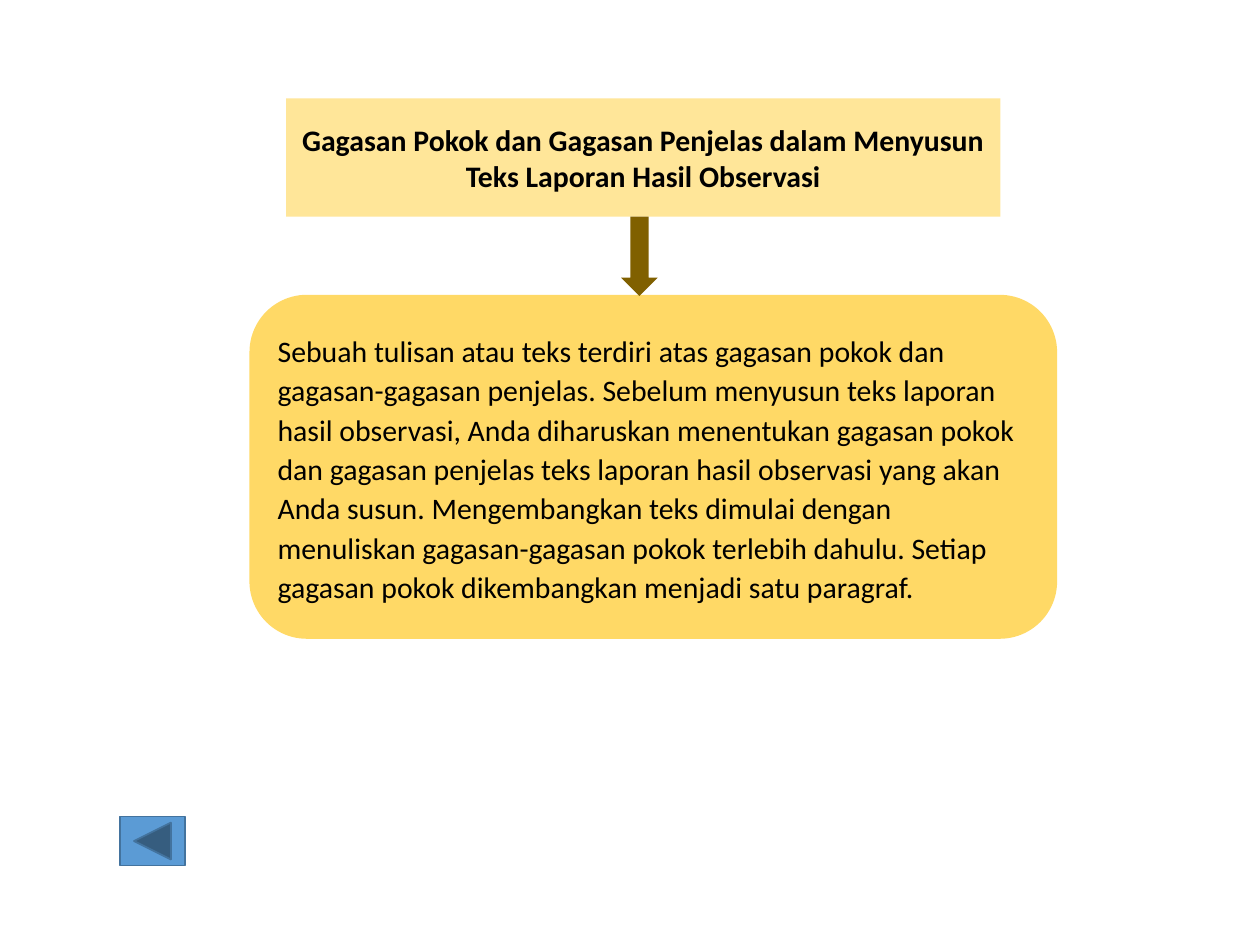
import pptx
import pptx.util
import pptx.dml.color
import pptx.enum.shapes
import pptx.enum.text
import pptx.oxml
import pptx.oxml.ns
from dataclasses import dataclass

Inches = pptx.util.Inches
Kind = pptx.enum.shapes.MSO_SHAPE
Align = pptx.enum.text.PP_ALIGN


@dataclass(frozen=True)
class Theme:
    font: str = "Calibri"
    size: float = 17
    ink: str = "000000"
    head: str = "FFE699"
    body: str = "FFD966"
    arrow: str = "806000"
    button: str = "5B9BD5"
    edge: str = "43739E"


theme = Theme()


def color(code):
    return pptx.dml.color.RGBColor.from_string(code)


def write(shape, text, bold=False, align=Align.LEFT, spacing=1.0):
    frame = shape.text_frame
    frame.text = text
    frame.word_wrap = True
    frame.auto_size = pptx.enum.text.MSO_AUTO_SIZE.NONE
    frame.vertical_anchor = pptx.enum.text.MSO_ANCHOR.MIDDLE
    frame.margin_left = frame.margin_right = Inches(0.09)
    frame.margin_top = frame.margin_bottom = Inches(0.04)
    para = frame.paragraphs[0]
    para.alignment = align
    para.line_spacing = spacing
    font = para.runs[0].font
    font.name, font.size, font.bold = theme.font, pptx.util.Pt(theme.size), bold
    font.color.rgb = color(theme.ink)


deck = pptx.Presentation()
deck.slide_width, deck.slide_height = Inches(10), Inches(7.5)
slide = deck.slides.add_slide(deck.slide_layouts[5])

# Title placeholder, given a rounded outline
title = slide.shapes.title
title.left, title.top = Inches(2.27), Inches(0.78)
title.width, title.height = Inches(5.67), Inches(0.94)
title._element.spPr.append(pptx.oxml.parse_xml(
    f'<a:prstGeom {pptx.oxml.ns.nsdecls("a")} prst="roundRect"><a:avLst/></a:prstGeom>'))
title.fill.solid()
title.fill.fore_color.rgb = color(theme.head)
write(title, "Gagasan Pokok dan Gagasan Penjelas dalam Menyusun Teks Laporan Hasil Observasi",
      bold=True, align=Align.CENTER)

# Body panel, arrow and back button
parts = {}
for name, kind, box, fill in [
    ("body", Kind.ROUNDED_RECTANGLE, (1.98, 2.34, 6.41, 2.73), theme.body),
    ("arrow", Kind.DOWN_ARROW, (4.93, 1.72, 0.29, 0.63), theme.arrow),
    ("back", Kind.ACTION_BUTTON_BACK_OR_PREVIOUS, (0.95, 6.48, 0.52, 0.39), theme.button),
]:
    shape = slide.shapes.add_shape(kind, *map(Inches, box))
    shape.shadow.inherit = False
    shape.fill.solid()
    shape.fill.fore_color.rgb = color(fill)
    shape.line.fill.background()
    parts[name] = shape

parts["back"].line.color.rgb = color(theme.edge)
parts["back"].line.width = pptx.util.Pt(1)

write(parts["body"],
      "Sebuah tulisan atau teks terdiri atas gagasan pokok dan gagasan-gagasan penjelas. "
      "Sebelum menyusun teks laporan hasil observasi, Anda diharuskan menentukan gagasan "
      "pokok dan gagasan penjelas teks laporan hasil observasi yang akan Anda susun. "
      "Mengembangkan teks dimulai dengan menuliskan gagasan-gagasan pokok terlebih dahulu. "
      "Setiap gagasan pokok dikembangkan menjadi satu paragraf.",
      spacing=1.1)

deck.save("out.pptx")
